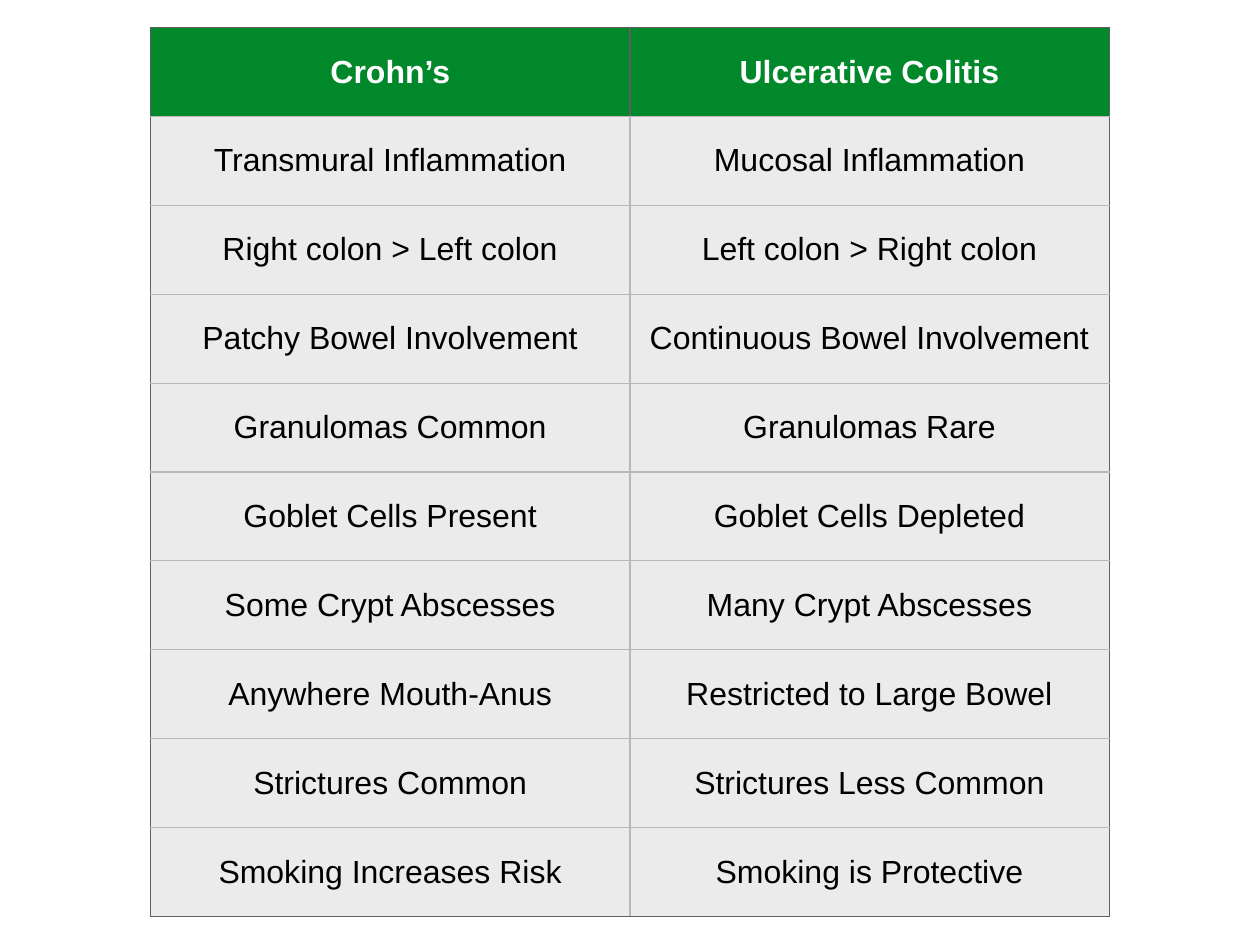
from lxml import etree
from pptx import Presentation
from pptx.dml.color import RGBColor
from pptx.enum import text
from pptx.oxml import ns
from pptx.util import Cm, Pt

GREEN = RGBColor(0x00, 0x88, 0x2B)
PALE = RGBColor(0xEB, 0xEB, 0xEB)
WHITE = RGBColor(0xFF, 0xFF, 0xFF)
BLACK = RGBColor(0x00, 0x00, 0x00)
DARK_LINE = RGBColor(0x60, 0x60, 0x60)
LIGHT_LINE = RGBColor(0xB8, 0xB8, 0xB8)

ROWS = [
    ("Crohn’s", "Ulcerative Colitis"),
    ("Transmural Inflammation", "Mucosal Inflammation"),
    ("Right colon > Left colon", "Left colon > Right colon"),
    ("Patchy Bowel Involvement", "Continuous Bowel Involvement"),
    ("Granulomas Common", "Granulomas Rare"),
    ("Goblet Cells Present", "Goblet Cells Depleted"),
    ("Some Crypt Abscesses", "Many Crypt Abscesses"),
    ("Anywhere Mouth-Anus", "Restricted to Large Bowel"),
    ("Strictures Common", "Strictures Less Common"),
    ("Smoking Increases Risk", "Smoking is Protective"),
]
COL_WIDTH = 13.74
ROW_HEIGHT = 2.55


def set_borders(cell, colors):
    """Draw 1 pt borders; colors maps each side (L, R, T, B) to a colour."""
    tc_pr = cell._tc.get_or_add_tcPr()
    # Border elements must come before the fill, in schema order
    for i, (side, color) in enumerate(colors.items()):
        ln = etree.Element(ns.qn(f"a:ln{side}"), w=str(Pt(1)))
        fill = etree.SubElement(ln, ns.qn("a:solidFill"))
        etree.SubElement(fill, ns.qn("a:srgbClr"), val=str(color))
        tc_pr.insert(i, ln)


def fill_cell(cell, words, header):
    cell.fill.solid()
    cell.fill.fore_color.rgb = GREEN if header else PALE
    cell.vertical_anchor = text.MSO_ANCHOR.MIDDLE
    cell.margin_left = cell.margin_right = Cm(0.14)
    cell.margin_top = cell.margin_bottom = Cm(0.14)
    p = cell.text_frame.paragraphs[0]
    p.text = words
    p.alignment = text.PP_ALIGN.CENTER
    font = p.runs[0].font
    font.name = "Arial"
    font.size = Pt(26)
    font.bold = header
    font.color.rgb = WHITE if header else BLACK


def add_comparison(slide, rows):
    n_rows, n_cols = len(rows), len(rows[0])
    table = slide.shapes.add_table(
        n_rows, n_cols, Cm(4.32), Cm(0.79),
        Cm(COL_WIDTH * n_cols), Cm(ROW_HEIGHT * n_rows)).table
    table.horz_banding = False
    for column in table.columns:
        column.width = Cm(COL_WIDTH)
    for r, row in enumerate(rows):
        table.rows[r].height = Cm(ROW_HEIGHT)
        header = r == 0
        for c, words in enumerate(row):
            cell = table.cell(r, c)
            fill_cell(cell, words, header)
            # Dark lines around the header cells and the outer edge
            dark = {"L": c == 0, "R": c == n_cols - 1,
                    "T": False, "B": r == n_rows - 1}
            set_borders(cell, {
                side: DARK_LINE if header or outer else LIGHT_LINE
                for side, outer in dark.items()})


def main():
    prs = Presentation()
    prs.slide_width, prs.slide_height = Cm(36.12), Cm(27.1)
    # The slide has no title, so the blank layout is used
    slide = prs.slides.add_slide(prs.slide_layouts[6])
    add_comparison(slide, ROWS)
    prs.save("out.pptx")


if __name__ == "__main__":
    main()
